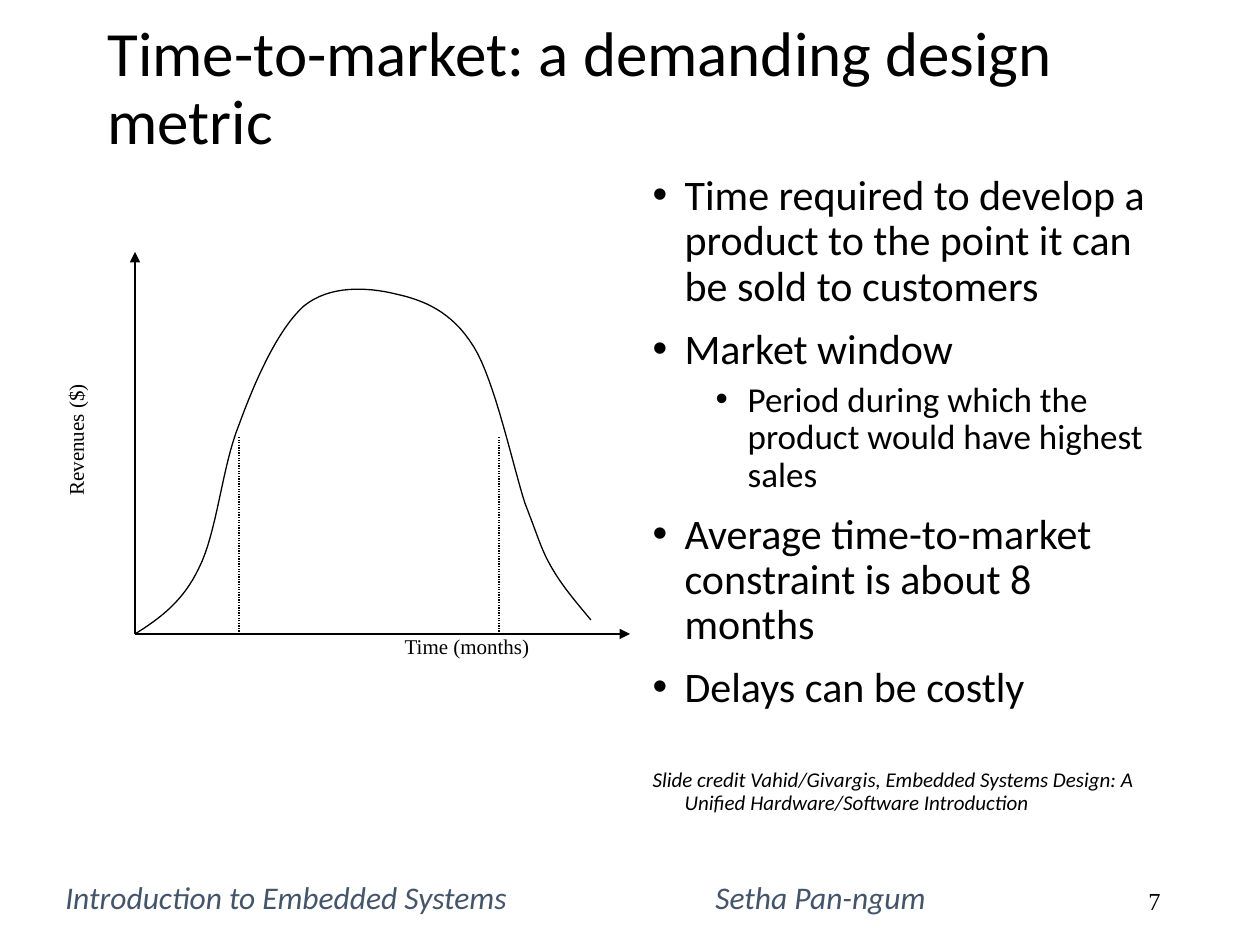
from lxml import etree
from pptx import Presentation
from pptx.dml.color import RGBColor
from pptx.enum.dml import MSO_LINE
from pptx.enum.shapes import MSO_CONNECTOR
from pptx.enum.text import MSO_ANCHOR, MSO_AUTO_SIZE, PP_ALIGN
from pptx.oxml.ns import qn
from pptx.util import Pt

PX = 914400 / 126
STRAIGHT = MSO_CONNECTOR.STRAIGHT
DOTTED = MSO_LINE.ROUND_DOT
MIDDLE = MSO_ANCHOR.MIDDLE
NO_AUTOFIT = MSO_AUTO_SIZE.NONE
LEFT, CENTER, RIGHT = PP_ALIGN.LEFT, PP_ALIGN.CENTER, PP_ALIGN.RIGHT
COLORS = {"ink": "000000", "footer": "44546A"}


def emu(*lengths):
    return [round(length * PX) for length in lengths]


def style(paragraph, size, face="Calibri", color="ink", align=LEFT, italic=False):
    paragraph.alignment = align
    font = paragraph.font
    font.size, font.name, font.italic = Pt(size), face, italic
    font.color.rgb = RGBColor.from_string(COLORS[color])


prs = Presentation()
prs.slide_width, prs.slide_height = emu(1260, 945)
slide = prs.slides.add_slide(prs.slide_layouts[1])
title, body = slide.placeholders

title.left, title.top, title.width, title.height = emu(95, 32, 1071, 116)
title.text_frame.text = "Time-to-market: a demanding design metric"
title.text_frame.auto_size = NO_AUTOFIT
title.text_frame.vertical_anchor = MIDDLE
heading = title.text_frame.paragraphs[0]
heading.line_spacing = 0.9
style(heading, 36)

body.left, body.top, body.width, body.height = emu(640, 168, 525, 714)
body.text_frame.auto_size = NO_AUTOFIT
points = [
    ("Time required to develop a product to the point it can be sold to customers", 0, 24, 10, True),
    ("Market window", 0, 24, 10, True),
    ("Period during which the product would have highest sales", 1, 20, 5, True),
    ("Average time-to-market constraint is about 8 months", 0, 24, 10, True),
    ("Delays can be costly", 0, 24, 10, True),
    ("Slide credit Vahid/Givargis, Embedded Systems Design: "
     "A Unified Hardware/Software Introduction", 0, 12, 33, False),
]
body.text_frame.text = "\n".join(point[0] for point in points)
for paragraph, (_, level, size, gap, bulleted) in zip(body.text_frame.paragraphs, points):
    paragraph.level = level
    paragraph.line_spacing = 0.9
    paragraph.space_before = Pt(gap)
    properties = paragraph._p.get_or_add_pPr()
    margin, hanging = emu(32 + 63 * level, -32)
    properties.set("marL", str(margin))
    properties.set("indent", str(hanging))
    if bulleted:
        etree.SubElement(properties, qn("a:buChar")).set("char", "•")
    else:
        etree.SubElement(properties, qn("a:buNone"))
    style(paragraph, size, italic=not bulleted)

footer = slide.shapes.add_textbox(*emu(53, 872, 1144, 53)).text_frame
footer.word_wrap = True
footer.text = "Introduction to Embedded Systems\tSetha Pan-ngum"
credit_line = footer.paragraphs[0]
credit_line.space_before = Pt(3.6)
tab_stops = etree.SubElement(credit_line._p.get_or_add_pPr(), qn("a:tabLst"))
author_stop = etree.SubElement(tab_stops, qn("a:tab"))
author_stop.set("pos", str(emu(650)[0]))
author_stop.set("algn", "l")
style(credit_line, 18, color="footer", italic=True)

page_number = slide.shapes.add_textbox(*emu(890, 876, 283, 50)).text_frame
page_number.word_wrap = True
page_number.vertical_anchor = MIDDLE
page_number.text = "7"
style(page_number.paragraphs[0], 14, "Times New Roman", align=RIGHT)

ORIGIN_X, ORIGIN_Y = 135, 634
WINDOW_TOP = 437
for start_x, start_y, end_x, end_y, is_axis in [
    (ORIGIN_X, ORIGIN_Y, ORIGIN_X, 252, True),
    (ORIGIN_X, ORIGIN_Y, 630, ORIGIN_Y, True),
    (239, WINDOW_TOP, 239, ORIGIN_Y, False),
    (499, WINDOW_TOP, 499, ORIGIN_Y, False),
]:
    rule = slide.shapes.add_connector(STRAIGHT, *emu(start_x, start_y, end_x, end_y))
    rule.line.width = Pt(0.75)
    rule.line.color.rgb = RGBColor.from_string(COLORS["ink"])
    if is_axis:
        arrow = etree.SubElement(rule.line._get_or_add_ln(), qn("a:tailEnd"))
        arrow.set("type", "triangle")
    else:
        rule.line.dash_style = DOTTED
    etree.SubElement(rule._element.spPr, qn("a:effectLst"))

for label, left, top, width, height, rotation in [
    ("Revenues ($)", -82, 411, 348, 58, 270),
    ("Time (months)", 343, ORIGIN_Y, 248, 52, 0),
]:
    axis_label = slide.shapes.add_textbox(*emu(left, top, width, height))
    axis_label.rotation = rotation
    frame = axis_label.text_frame
    frame.word_wrap = True
    frame.margin_left = frame.margin_right = frame.margin_top = frame.margin_bottom = 0
    frame.text = label
    style(frame.paragraphs[0], 12, "Times New Roman", align=CENTER)

bezier_arcs = [
    ((159, 619), (183, 602), (199, 568)),
    ((217, 533), (222, 467), (239, 425)),
    ((255, 381), (278, 329), (304, 306)),
    ((330, 285), (367, 287), (396, 294)),
    ((423, 300), (452, 311), (474, 347)),
    ((495, 381), (513, 466), (525, 503)),
    ((539, 539), (541, 549), (552, 568)),
    ((563, 587), (577, 603), (591, 620)),
]
STEPS = 16
arc_start = (ORIGIN_X, ORIGIN_Y)
curve_points = []
for control_a, control_b, arc_end in bezier_arcs:
    for step in range(1, STEPS + 1):
        t = step / STEPS
        curve_points.append(emu(*(
            (1 - t) ** 3 * p0 + 3 * (1 - t) ** 2 * t * p1 + 3 * (1 - t) * t ** 2 * p2 + t ** 3 * p3
            for p0, p1, p2, p3 in zip(arc_start, control_a, control_b, arc_end)
        )))
    arc_start = arc_end
builder = slide.shapes.build_freeform(*emu(ORIGIN_X, ORIGIN_Y))
builder.add_line_segments(curve_points, close=False)
revenue_curve = builder.convert_to_shape()
revenue_curve.shadow.inherit = False
revenue_curve.fill.background()
revenue_curve.line.width = Pt(0.75)
revenue_curve.line.color.rgb = RGBColor.from_string(COLORS["ink"])

prs.save("out.pptx")
